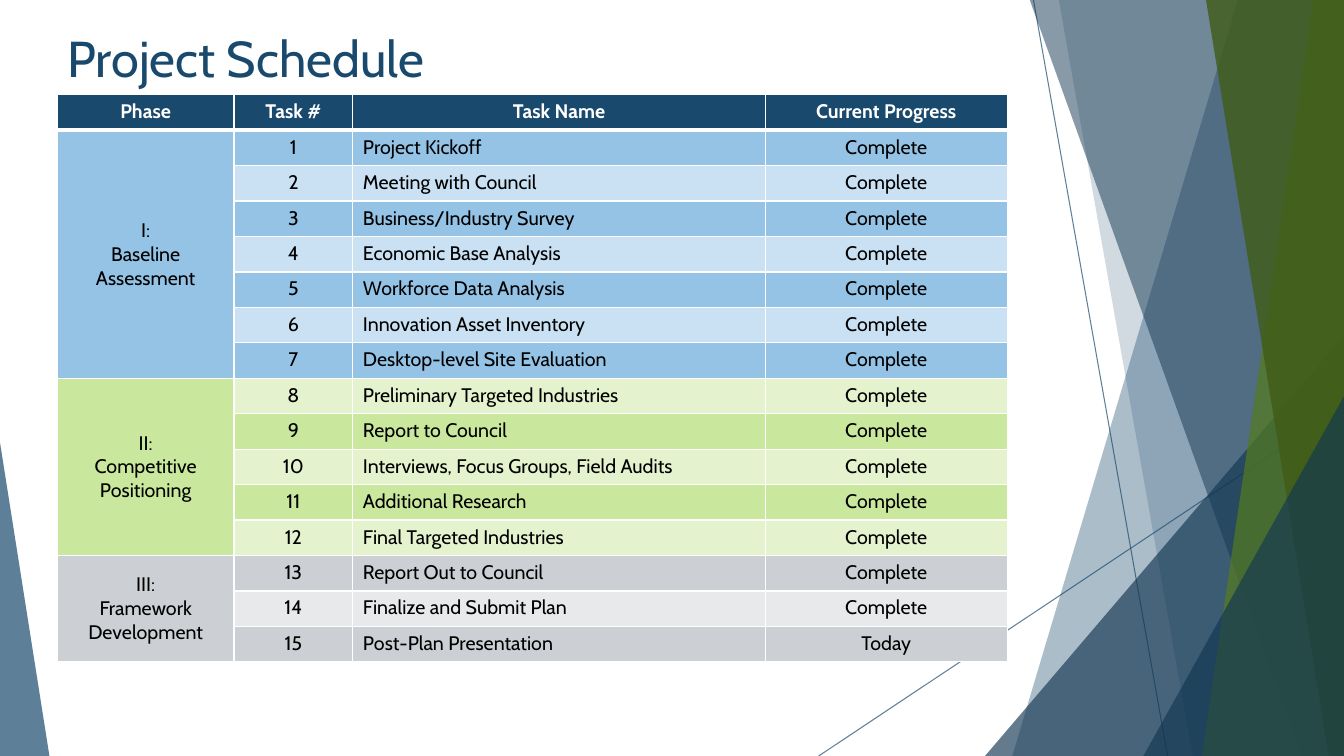
"""Build the project schedule slide: a phase and task table beside angular bands."""
from lxml import etree
from pptx import Presentation
from pptx.dml.color import RGBColor
from pptx.enum.shapes import MSO_CONNECTOR, MSO_SHAPE
from pptx.enum.text import MSO_ANCHOR, MSO_AUTO_SIZE, PP_ALIGN
from pptx.oxml.ns import qn
from pptx.util import Inches, Pt

LEFT, CENTER = PP_ALIGN.LEFT, PP_ALIGN.CENTER
TOP, MIDDLE = MSO_ANCHOR.TOP, MSO_ANCHOR.MIDDLE
NO_AUTOFIT = MSO_AUTO_SIZE.NONE
STRAIGHT, TRIANGLE = MSO_CONNECTOR.STRAIGHT, MSO_SHAPE.ISOSCELES_TRIANGLE

FONT = "Cabin"
COLORS = {
    "navy": "19496D", "deep": "133752", "green": "557B1D", "moss": "405C16",
    "white": "FFFFFF", "black": "000000",
    "blue": "94C3E6", "pale blue": "C9E1F3",
    "lime": "C9E79D", "pale lime": "E4F3CE",
    "gray": "CCD0D4", "pale gray": "E8E9EB",
}
WIDTH, HEIGHT, BAND_TOP = 13.33, 7.5, -0.01

TITLE = "Project Schedule"
HEADINGS = ["Phase", "Task #", "Task Name", "Current Progress"]
PHASES = [
    ("I:\nBaseline Assessment", "blue", [
        "Project Kickoff", "Meeting with Council", "Business/Industry Survey",
        "Economic Base Analysis", "Workforce Data Analysis",
        "Innovation Asset Inventory", "Desktop-level Site Evaluation"]),
    ("II:\nCompetitive Positioning", "lime", [
        "Preliminary Targeted Industries", "Report to Council",
        "Interviews, Focus Groups, Field Audits", "Additional Research",
        "Final Targeted Industries"]),
    ("III:\nFramework Development", "gray", [
        "Report Out to Council", "Finalize and Submit Plan",
        "Post-Plan Presentation"]),
]
TASK_COUNT = sum(len(tasks) for _, _, tasks in PHASES)
COLUMN_WIDTHS = [1.75, 1.18, 4.09, 2.4]
TABLE_LEFT, TABLE_TOP, TABLE_HEIGHT = 0.57, 0.94, 5.63

LINES = [(10.25, 0, 11.58, HEIGHT), (WIDTH, 4.03, 8.12, HEIGHT)]
DECORATIONS = [
    ("band", (12.28, 10.04), "navy", 36),
    ("band", (10.5, 11.83), "navy", 20),
    ("triangle", (9.77, 3.33, 3.56, 1), "deep", 66),
    ("band", (10.21, 12.91), "deep", 50),
    ("band", (13.03, 11.92), "green", 70),
    ("band", (11.96, 13.18), "moss", 80),
    ("triangle", (11.34, 3.93, 1.99, 1), "deep", 66),
    ("triangle", (0, 4.39, 0.49, 0), "navy", 70),
]


def rgb(name):
    """Return the named colour."""
    return RGBColor.from_string(COLORS[name])


def set_opacity(shape, percent):
    """Make every plain colour of a shape partly transparent."""
    for color in shape.element.spPr.iter(qn("a:srgbClr")):
        etree.SubElement(color, qn("a:alpha"), val=str(percent * 1000))


def write_text(frame, text, size=14, color="black", bold=False,
               align=CENTER, anchor=TOP):
    """Fill a text frame, one paragraph for each line of text."""
    frame.word_wrap = True
    frame.vertical_anchor = anchor
    for index, line in enumerate(text.split("\n")):
        paragraph = frame.add_paragraph() if index else frame.paragraphs[0]
        paragraph.alignment = align
        run = paragraph.add_run()
        run.text = line
        run.font.name = FONT
        run.font.size = Pt(size)
        run.font.bold = bold
        run.font.color.rgb = rgb(color)


def add_line(slide, x1, y1, x2, y2):
    """Draw a thin background line."""
    line = slide.shapes.add_connector(
        STRAIGHT, Inches(x1), Inches(y1), Inches(x2), Inches(y2))
    line.line.color.rgb = rgb("navy")
    line.line.width = Pt(0.75)
    set_opacity(line, 70)
    etree.SubElement(line.element.spPr, qn("a:effectLst"))


def add_band(slide, top_x, bottom_x):
    """Draw a band from a slanted left edge to the right slide edge."""
    builder = slide.shapes.build_freeform(Inches(top_x), Inches(BAND_TOP))
    corners = [(WIDTH, BAND_TOP), (WIDTH, HEIGHT), (bottom_x, HEIGHT)]
    builder.add_line_segments([(Inches(x), Inches(y)) for x, y in corners])
    return builder.convert_to_shape()


def add_triangle(slide, left, top, width, apex):
    """Draw a triangle standing on the bottom slide edge."""
    triangle = slide.shapes.add_shape(
        TRIANGLE, Inches(left), Inches(top), Inches(width), Inches(HEIGHT - top))
    triangle.adjustments[0] = apex
    return triangle


def add_decorations(slide):
    """Draw the lines and translucent shapes behind the content."""
    for line in LINES:
        add_line(slide, *line)
    builders = {"band": add_band, "triangle": add_triangle}
    for kind, geometry, color, opacity in DECORATIONS:
        shape = builders[kind](slide, *geometry)
        shape.shadow.inherit = False
        shape.fill.solid()
        shape.fill.fore_color.rgb = rgb(color)
        set_opacity(shape, opacity)
        shape.line.fill.background()


def style_cell(cell, color, top=1, bottom=1):
    """Give a cell white borders and a fill."""
    properties = cell._tc.get_or_add_tcPr()
    for side, width in (("L", 1), ("R", 1), ("T", top), ("B", bottom)):
        border = etree.SubElement(properties, qn(f"a:ln{side}"), w=str(Pt(width)))
        fill = etree.SubElement(border, qn("a:solidFill"))
        etree.SubElement(fill, qn("a:srgbClr"), val=COLORS["white"])
    cell.fill.solid()
    cell.fill.fore_color.rgb = rgb(color)


def add_schedule(slide):
    """Add the table of phases, tasks and progress."""
    row_count = TASK_COUNT + 1
    table = slide.shapes.add_table(
        row_count, len(HEADINGS), Inches(TABLE_LEFT), Inches(TABLE_TOP),
        Inches(sum(COLUMN_WIDTHS)), Inches(TABLE_HEIGHT)).table
    for column, width in zip(table.columns, COLUMN_WIDTHS):
        column.width = Inches(width)
    for row in table.rows:
        row.height = Inches(TABLE_HEIGHT / row_count)
    for column, heading in enumerate(HEADINGS):
        cell = table.cell(0, column)
        style_cell(cell, "navy", bottom=3)
        write_text(cell.text_frame, heading, color="white", bold=True)

    number = 1
    for phase, color, tasks in PHASES:
        phase_cell = table.cell(number, 0)
        phase_cell.merge(table.cell(number + len(tasks) - 1, 0))
        write_text(phase_cell.text_frame, phase)
        phase_cell.vertical_anchor = MIDDLE
        for task in tasks:
            progress = "Today" if number == TASK_COUNT else "Complete"
            shade = color if number % 2 else f"pale {color}"
            top = 3 if number == 1 else 1
            style_cell(table.cell(number, 0), color, top=top)
            for column, text in enumerate([str(number), task, progress], 1):
                cell = table.cell(number, column)
                style_cell(cell, shade, top=top)
                write_text(cell.text_frame, text,
                           align=LEFT if text == task else CENTER)
            number += 1


def main():
    """Build and save the slide."""
    presentation = Presentation()
    presentation.slide_width = Inches(WIDTH)
    presentation.slide_height = Inches(HEIGHT)
    slide = presentation.slides.add_slide(presentation.slide_layouts[5])
    add_decorations(slide)
    title = slide.shapes.title
    title.left, title.top = Inches(0.57), Inches(0.22)
    title.width, title.height = Inches(9.4), Inches(1.44)
    title.text_frame.auto_size = NO_AUTOFIT
    write_text(title.text_frame, TITLE, size=36, color="navy", align=LEFT)
    add_schedule(slide)
    presentation.save("out.pptx")


if __name__ == "__main__":
    main()
